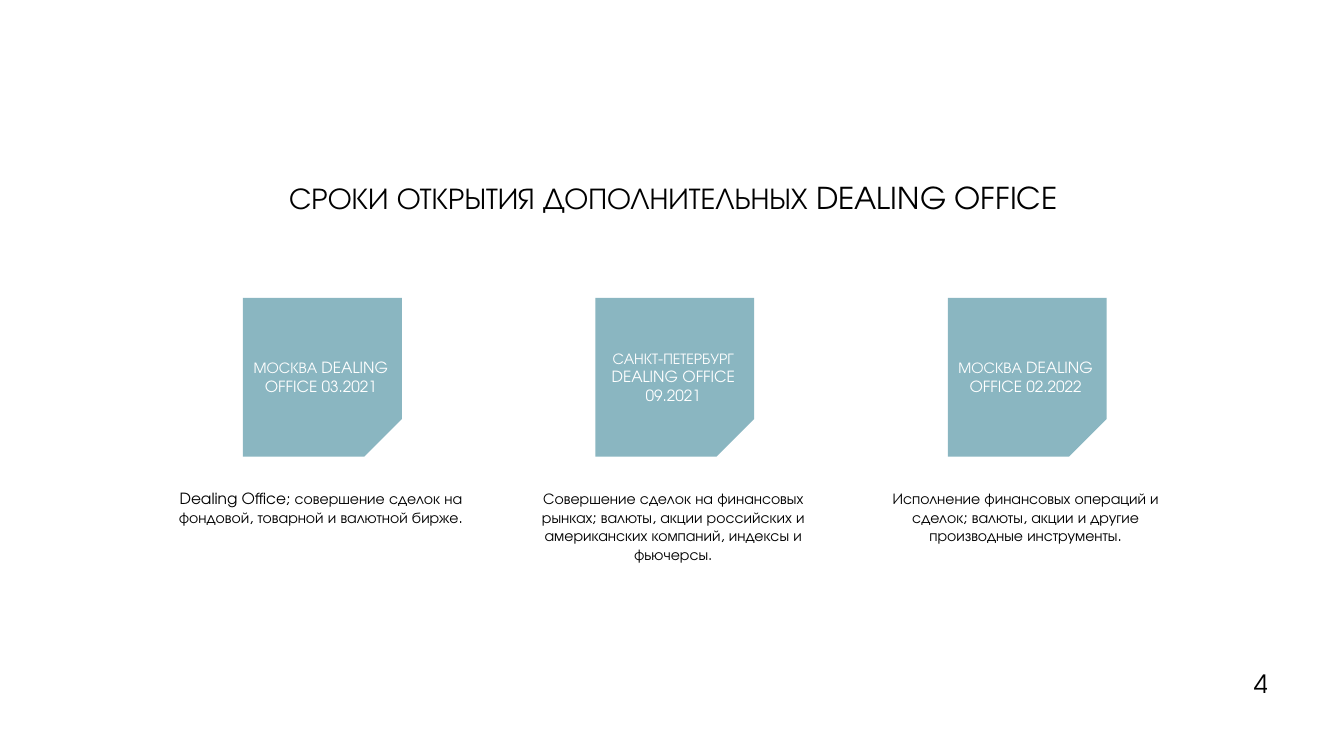
from pptx import Presentation
from pptx.dml.color import RGBColor
from pptx.enum.shapes import MSO_SHAPE as Shape
from pptx.enum.text import MSO_ANCHOR as Anchor, MSO_AUTO_SIZE as AutoSize, PP_ALIGN as Align
from pptx.util import Emu, Pt

PX = 9144  # 100 px to the inch
FONT = "TeX Gyre Adventor"
TEAL, BLACK, WHITE = "8AB6C1", "000000", "FFFFFF"

COLUMN_LEFT, COLUMN_STEP, COLUMN_WIDTH = 342, 699, 589
TILE_SIZE = 315
OFFICES = [
    ("МОСКВА DEALING OFFICE 03.2021",
     "Dealing Office; совершение сделок на фондовой, товарной и валютной бирже."),
    ("САНКТ-ПЕТЕРБУРГ DEALING OFFICE 09.2021",
     "Совершение сделок на финансовых рынках; валюты, акции российских "
     "и американских компаний, индексы и фьючерсы."),
    ("МОСКВА DEALING OFFICE 02.2022",
     "Исполнение финансовых операций и сделок; валюты, акции и другие "
     "производные инструменты."),
]


def color(value):
    return RGBColor.from_string(value)


def emu(*lengths):
    return [Emu(length * PX) for length in lengths]


def write(box, text, size, ink=BLACK, align=Align.CENTER, anchor=Anchor.TOP, inset=0):
    frame = box.text_frame
    frame.word_wrap = True
    frame.auto_size = AutoSize.NONE
    frame.vertical_anchor = anchor
    frame.margin_left = frame.margin_right = Emu(inset * PX)
    frame.margin_top = frame.margin_bottom = 0
    para = frame.paragraphs[0]
    para.alignment = align
    span = para.add_run()
    span.text = text
    span.font.name = FONT
    span.font.size = Pt(size)
    span.font.color.rgb = color(ink)


def add_heading(page, left, top, width, height):
    title = page.shapes.title
    title.left, title.top, title.width, title.height = emu(left, top, width, height)
    write(title, "СРОКИ ОТКРЫТИЯ ДОПОЛНИТЕЛЬНЫХ DEALING OFFICE", 43)


def add_office(page, left, top, width, label, description):
    """Place a snipped tile with its label, and the description below it."""
    label_left = left + (width - TILE_SIZE) // 2
    tile = page.shapes.add_shape(
        Shape.SNIP_1_RECTANGLE, *emu(label_left + 3, top + 1, TILE_SIZE, TILE_SIZE))
    tile.rotation = 90
    tile.adjustments[0] = 0.237
    tile.shadow.inherit = False
    tile.fill.solid()
    tile.fill.fore_color.rgb = color(TEAL)
    tile.line.fill.background()

    label_box = page.shapes.add_textbox(*emu(label_left, top, TILE_SIZE, TILE_SIZE))
    write(label_box, label, 22, WHITE, anchor=Anchor.MIDDLE)
    description_box = page.shapes.add_textbox(*emu(left, top + 381, width, 182))
    write(description_box, description, 22)


def add_page_number(page, left, top, width, height):
    box = page.shapes.add_textbox(*emu(left, top, width, height))
    write(box, "4", 36, align=Align.RIGHT, anchor=Anchor.MIDDLE, inset=10)


def main():
    deck = Presentation()
    deck.slide_width, deck.slide_height = emu(2666, 1500)
    page = deck.slides.add_slide(deck.slide_layouts.get_by_name("Title Only"))
    add_heading(page, COLUMN_LEFT, 356, 1987, 194)
    for index, (label, description) in enumerate(OFFICES):
        left = COLUMN_LEFT + index * COLUMN_STEP
        add_office(page, left, 590, COLUMN_WIDTH, label, description)
    add_page_number(page, 2415, 1317, 110, 80)
    deck.save("out.pptx")


if __name__ == "__main__":
    main()
